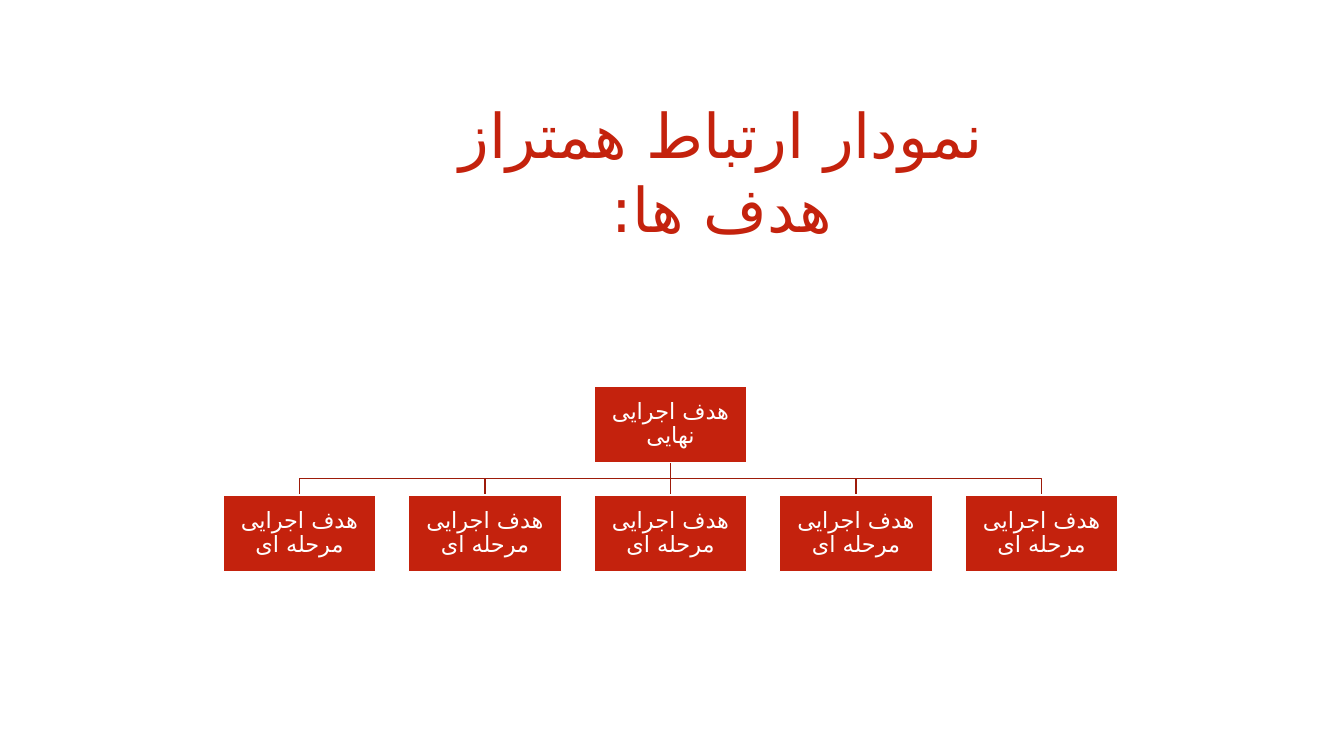
from dataclasses import dataclass

from lxml.etree import SubElement as Sub
from pptx import Presentation
from pptx.dml.color import RGBColor as Rgb
from pptx.enum.shapes import MSO_CONNECTOR as Link, MSO_SHAPE as Form
from pptx.enum.text import MSO_ANCHOR as Anchor, MSO_AUTO_SIZE as Fit, PP_ALIGN as Align
from pptx.oxml.ns import qn
from pptx.util import Pt

PX = 9144  # EMU per px, 100 px to the inch
FONT = "League Spartan"
SCRIPT = "DejaVu Sans"  # face for the Persian letters
HEX = {"red": "C4220D", "dark": "9D1B0A", "white": "FFFFFF"}
WIDE, HIGH, STEP = 152, 76, 184
ROOT_X, ROOT_Y, ROW_Y = 589, 383, 491


@dataclass
class Node:
    text: str
    x: int
    y: int

    @property
    def mid(self) -> int:
        return self.x + WIDE // 2


def tint(name: str) -> Rgb:
    return Rgb.from_string(HEX[name])


def write(frame, text: str, size: int, color: str, inset: int) -> None:
    """Set one centred right-to-left paragraph."""
    frame.text = text
    frame.word_wrap = True
    frame.margin_left = frame.margin_right = inset * PX
    para = frame.paragraphs[0]
    para.alignment = Align.CENTER
    para._p.get_or_add_pPr().set("rtl", "1")
    run = para.runs[0]
    run.font.size = Pt(size)
    run.font.name = FONT
    run.font.color.rgb = tint(color)
    props = run._r.get_or_add_rPr()
    props.set("lang", "fa-IR")
    Sub(props, qn("a:cs")).set("typeface", SCRIPT)


def ink(line, color: str) -> None:
    line.color.rgb = tint(color)
    line.width = Pt(1)


def draw_box(shapes, node: Node):
    box = shapes.add_shape(Form.RECTANGLE, node.x * PX, node.y * PX, WIDE * PX, HIGH * PX)
    box.shadow.inherit = False
    box.fill.solid()
    box.fill.fore_color.rgb = tint("red")
    ink(box.line, "white")
    frame = box.text_frame
    write(frame, node.text, 16, "white", 1)
    frame.margin_top = frame.margin_bottom = PX
    frame.vertical_anchor = Anchor.MIDDLE
    frame.paragraphs[0].line_spacing = 0.9
    return box


def draw_elbow(shapes, top: Node, low: Node) -> None:
    start = top.y + HIGH
    bend = (start + low.y) // 2
    path = shapes.build_freeform(top.mid, start, scale=PX)
    path.add_line_segments([(top.mid, bend), (low.mid, bend), (low.mid, low.y)], close=False)
    elbow = path.convert_to_shape()
    elbow.shadow.inherit = False
    elbow.fill.background()
    ink(elbow.line, "dark")


def draw_stem(shapes, top: Node, low: Node):
    stem = shapes.add_connector(
        Link.STRAIGHT, top.mid * PX, (top.y + HIGH) * PX, low.mid * PX, low.y * PX)
    Sub(stem._element.spPr, qn("a:effectLst"))
    ink(stem.line, "dark")
    return stem


def main() -> None:
    deck = Presentation()
    deck.slide_width, deck.slide_height = 1333 * PX, 750 * PX
    slide = deck.slides.add_slide(deck.slide_layouts[5])
    shapes = slide.shapes

    # Title
    title = shapes.title
    title.left, title.top, title.width, title.height = (n * PX for n in (379, 91, 674, 84))
    write(title.text_frame, "نمودار ارتباط همتراز هدف ها:", 44, "red", 10)
    title.text_frame.vertical_anchor = Anchor.TOP
    title.text_frame.auto_size = Fit.SHAPE_TO_FIT_TEXT

    # Goals: one root above a row of five
    root = Node("هدف اجرایی نهایی", ROOT_X, ROOT_Y)
    row = [Node("هدف اجرایی مرحله ای", ROOT_X + i * STEP, ROW_Y) for i in range(-2, 3)]

    # Links, behind the boxes
    for node in row:
        if node.mid != root.mid:
            draw_elbow(shapes, root, node)
    stem = draw_stem(shapes, root, row[2])

    # Boxes
    head = draw_box(shapes, root)
    boxes = [draw_box(shapes, node) for node in row]
    stem.begin_connect(head, 2)
    stem.end_connect(boxes[2], 0)

    deck.save("out.pptx")


if __name__ == "__main__":
    main()
